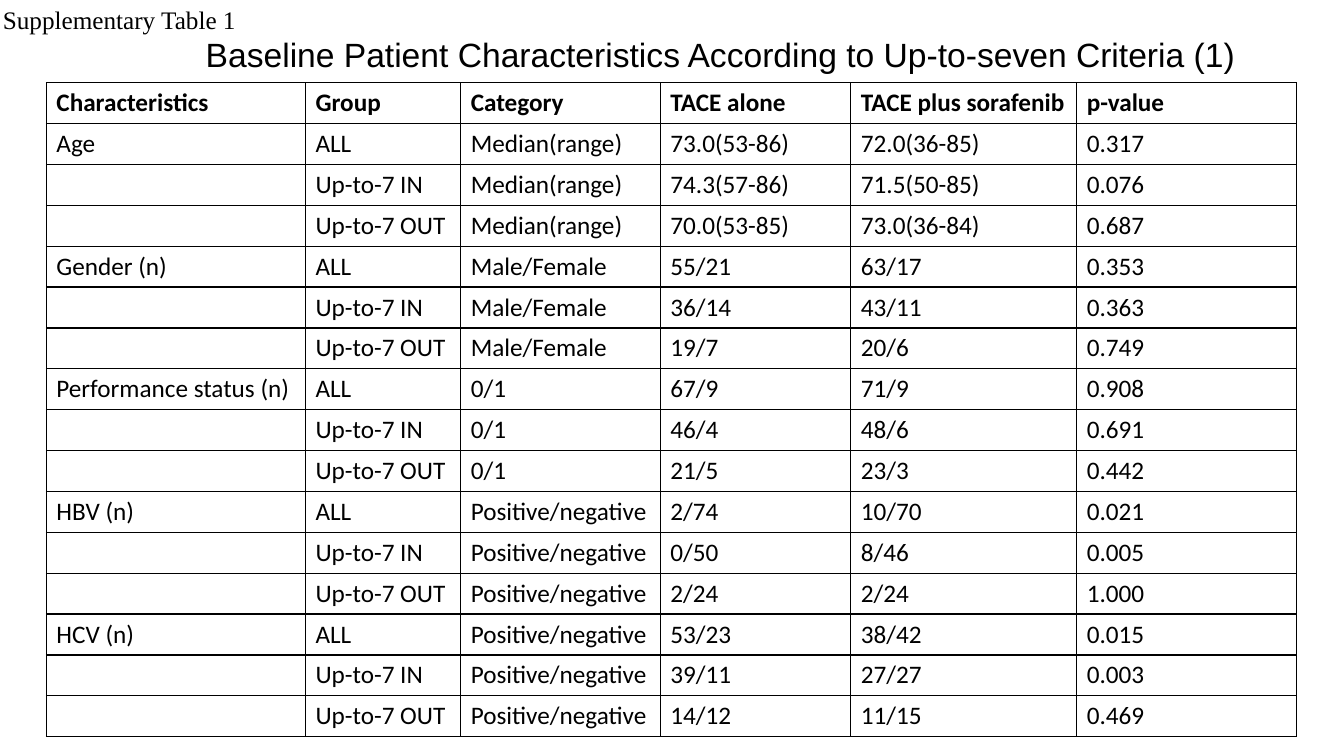
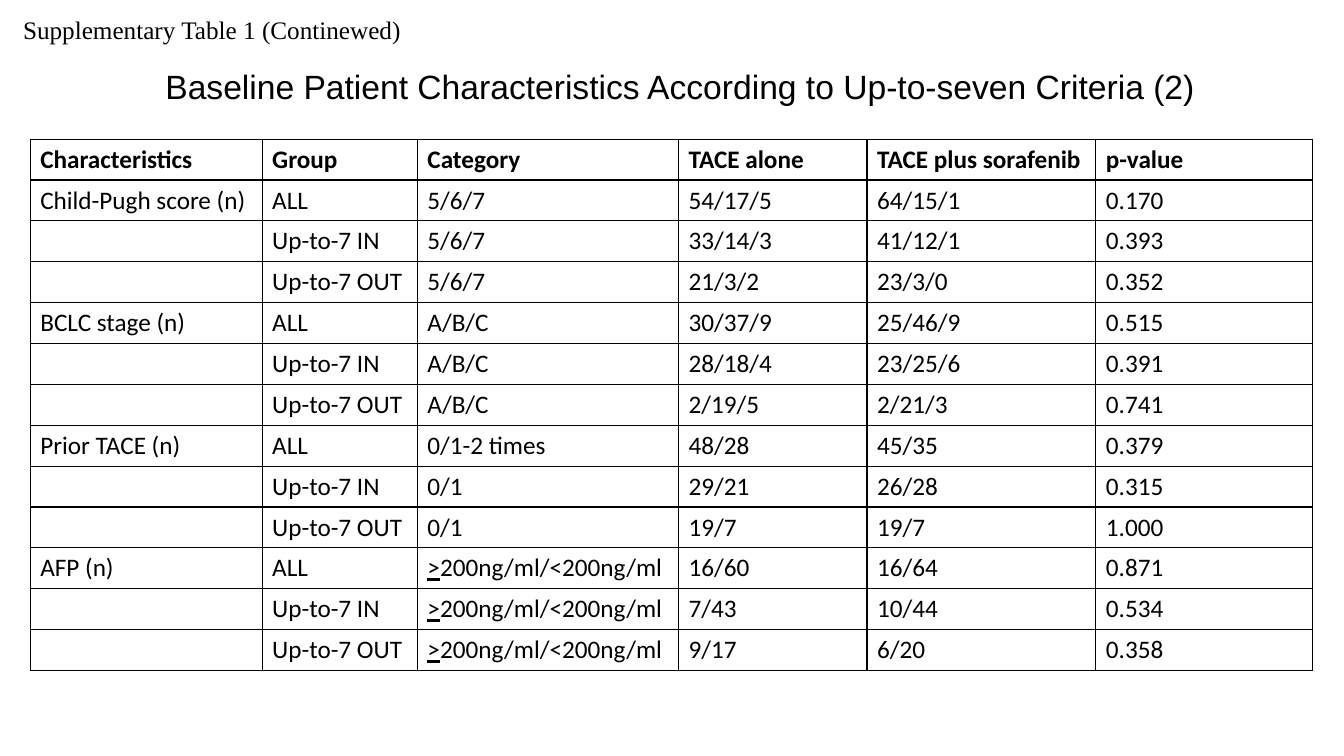
from lxml import etree
from pptx import Presentation
from pptx.dml.color import RGBColor
from pptx.enum.text import MSO_ANCHOR, MSO_AUTO_SIZE, PP_ALIGN
from pptx.oxml.ns import qn
from pptx.util import Inches, Pt

BLACK = RGBColor(0x00, 0x00, 0x00)
TITLE_FONT = "Arial"
TABLE_FONT = "Calibri"
LABEL_FONT = "Times New Roman"
TITLE_SIZE = Pt(24)
TEXT_SIZE = Pt(18)
BORDER_WIDTH = Pt(1)
BORDER_SIDES = ("a:lnL", "a:lnR", "a:lnT", "a:lnB")
TOP = MSO_ANCHOR.TOP
LEFT = PP_ALIGN.LEFT
NO_AUTOFIT = MSO_AUTO_SIZE.NONE
TITLE_ONLY = 5

HEADER = ("Characteristics", "Group", "Category", "TACE alone", "TACE plus sorafenib", "p-value")
PATIENT_GROUPS = ("ALL", "Up-to-7 IN", "Up-to-7 OUT")
MEDIAN = ("Median(range)",) * 3
GENDERS = ("Male/Female",) * 3
STATUS = ("0/1",) * 3
INFECTION = ("Positive/negative",) * 3
SCORES = ("5/6/7",) * 3
STAGES = ("A/B/C",) * 3
TREATMENTS = ("0/1-2 times", "0/1", "0/1")
AFP_LEVELS = (">200ng/ml/<200ng/ml",) * 3

PAGES = (
    {
        "label": "Supplementary Table 1",
        "label_box": (-0.07, -0.01, 3.85, 0.4),
        "title": "Baseline Patient Characteristics According to Up-to-seven Criteria (1)",
        "title_box": (1.94, 0.29, 10.52, 0.5),
        "table_box": (0.46, 0.82, 12.41, 6.49),
        "columns": (2.57, 1.54, 1.98, 1.89, 2.24, 2.18),
        "sections": (
            ("Age", MEDIAN, (
                ("73.0(53-86)", "72.0(36-85)", "0.317"),
                ("74.3(57-86)", "71.5(50-85)", "0.076"),
                ("70.0(53-85)", "73.0(36-84)", "0.687"))),
            ("Gender (n)", GENDERS, (
                ("55/21", "63/17", "0.353"),
                ("36/14", "43/11", "0.363"),
                ("19/7", "20/6", "0.749"))),
            ("Performance status (n)", STATUS, (
                ("67/9", "71/9", "0.908"),
                ("46/4", "48/6", "0.691"),
                ("21/5", "23/3", "0.442"))),
            ("HBV (n)", INFECTION, (
                ("2/74", "10/70", "0.021"),
                ("0/50", "8/46", "0.005"),
                ("2/24", "2/24", "1.000"))),
            ("HCV (n)", INFECTION, (
                ("53/23", "38/42", "0.015"),
                ("39/11", "27/27", "0.003"),
                ("14/12", "11/15", "0.469"))),
        ),
    },
    {
        "label": "Supplementary Table 1 (Continewed)",
        "label_box": (0.13, 0.09, 5.92, 0.4),
        "title": "Baseline Patient Characteristics According to Up-to-seven Criteria (2)",
        "title_box": (1.54, 0.6, 10.61, 0.5),
        "table_box": (0.3, 1.38, 12.72, 5.27),
        "columns": (2.3, 1.54, 2.59, 1.87, 2.27, 2.15),
        "sections": (
            ("Child-Pugh score (n)", SCORES, (
                ("54/17/5", "64/15/1", "0.170"),
                ("33/14/3", "41/12/1", "0.393"),
                ("21/3/2", "23/3/0", "0.352"))),
            ("BCLC stage (n)", STAGES, (
                ("30/37/9", "25/46/9", "0.515"),
                ("28/18/4", "23/25/6", "0.391"),
                ("2/19/5", "2/21/3", "0.741"))),
            ("Prior TACE (n)", TREATMENTS, (
                ("48/28", "45/35", "0.379"),
                ("29/21", "26/28", "0.315"),
                ("19/7", "19/7", "1.000"))),
            ("AFP (n)", AFP_LEVELS, (
                ("16/60", "16/64", "0.871"),
                ("7/43", "10/44", "0.534"),
                ("9/17", "6/20", "0.358"))),
        ),
    },
)


def format_runs(paragraph, font_name, size, bold=False):
    for run in paragraph.runs:
        run.font.name = font_name
        run.font.size = size
        run.font.bold = bold
        run.font.color.rgb = BLACK


def fill_text_shape(shape, text, font_name, size):
    frame = shape.text_frame
    frame.text = text
    frame.word_wrap = True
    frame.auto_size = NO_AUTOFIT
    frame.vertical_anchor = TOP
    paragraph = frame.paragraphs[0]
    paragraph.alignment = LEFT
    format_runs(paragraph, font_name, size)


def add_title(slide, text, box):
    title = slide.shapes.title
    title.left, title.top, title.width, title.height = map(Inches, box)
    fill_text_shape(title, text, TITLE_FONT, TITLE_SIZE)


def add_label(slide, text, box):
    label = slide.shapes.add_textbox(*map(Inches, box))
    fill_text_shape(label, text, LABEL_FONT, TEXT_SIZE)


def set_borders(cell):
    properties = cell._tc.get_or_add_tcPr()
    for position, side in enumerate(BORDER_SIDES):
        line = etree.Element(qn(side), w=str(BORDER_WIDTH))
        fill = etree.SubElement(line, qn("a:solidFill"))
        etree.SubElement(fill, qn("a:srgbClr"), val=str(BLACK))
        properties.insert(position, line)


def fill_cell(cell, text, bold):
    cell.fill.background()
    set_borders(cell)
    paragraph = cell.text_frame.paragraphs[0]
    if text.startswith(">"):
        paragraph.text = text[0]
        paragraph.runs[0].font.underline = True
        paragraph.add_run().text = text[1:]
    elif text:
        paragraph.text = text
    format_runs(paragraph, TABLE_FONT, TEXT_SIZE, bold)


def build_rows(sections):
    rows = [HEADER]
    for name, categories, results in sections:
        names = (name, "", "")
        for first, group, category, values in zip(names, PATIENT_GROUPS, categories, results):
            rows.append((first, group, category, *values))
    return rows


def add_characteristics_table(slide, sections, box, column_widths):
    rows = build_rows(sections)
    table = slide.shapes.add_table(len(rows), len(HEADER), *map(Inches, box)).table
    table.first_row = False
    table.horz_banding = False
    for column, width in zip(table.columns, column_widths):
        column.width = Inches(width)
    for row_index, row in enumerate(rows):
        for column_index, text in enumerate(row):
            fill_cell(table.cell(row_index, column_index), text, row_index == 0)


def main():
    presentation = Presentation()
    presentation.slide_width = Inches(13.33)
    presentation.slide_height = Inches(7.5)
    for page in PAGES:
        slide = presentation.slides.add_slide(presentation.slide_layouts[TITLE_ONLY])
        add_characteristics_table(slide, page["sections"], page["table_box"], page["columns"])
        add_title(slide, page["title"], page["title_box"])
        add_label(slide, page["label"], page["label_box"])
    presentation.save("out.pptx")


if __name__ == "__main__":
    main()
